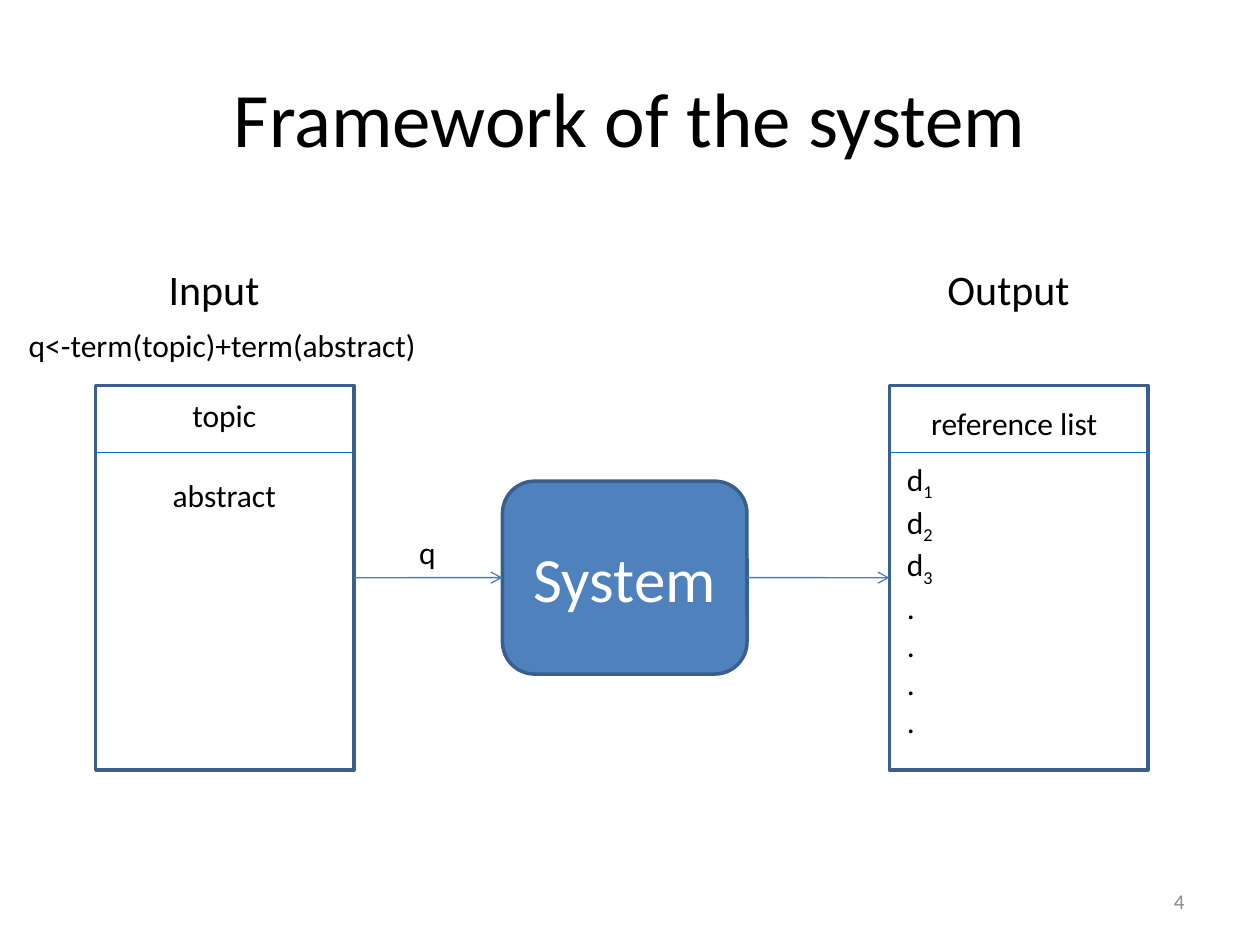
from dataclasses import dataclass

from lxml.etree import SubElement
from pptx import Presentation
from pptx.dml.color import RGBColor as RGB
from pptx.enum.shapes import MSO_CONNECTOR as CONN, MSO_SHAPE as SHAPE
from pptx.enum.text import MSO_ANCHOR as ANCHOR, MSO_AUTO_SIZE as AUTO, PP_ALIGN as ALIGN
from pptx.oxml.ns import qn
from pptx.util import Cm, Pt


@dataclass(frozen=True)
class Theme:
    """Colours, font and type sizes of the slide."""
    font: str = "Calibri"
    text: str = "000000"
    light: str = "FFFFFF"
    muted: str = "8C8C8C"
    fill: str = "4F81BD"
    border: str = "3A5F8C"
    divider: str = "0070C0"
    arrow: str = "4B7EBC"
    title: int = 44
    system: int = 36
    heading: int = 24
    body: int = 18
    number: int = 12


T = Theme()


def apply(obj, values):
    """Set each named attribute of an object."""
    for name, value in values.items():
        setattr(obj, name, value)


def add_run(p, text, size, color, subscript=False):
    """Add one formatted run to a paragraph."""
    r = p.add_run()
    apply(r, {"text": text})
    apply(r.font, {"name": T.font, "size": Pt(size)})
    r.font.color.rgb = RGB.from_string(color)
    if subscript:
        r._r.get_or_add_rPr().set("baseline", "-25000")


def write(tf, lines, size, color=T.text, align=ALIGN.LEFT):
    """Fill a text frame; a line is a base text and its subscript."""
    for i, (base, sub) in enumerate(lines):
        p = tf.add_paragraph() if i else tf.paragraphs[0]
        p.alignment = align
        add_run(p, base, size, color)
        if sub:
            add_run(p, sub, size, color, True)


def add_text(s, box, lines, size, color=T.text, align=ALIGN.LEFT, **frame):
    """Add a text box holding a string or a list of lines."""
    tf = s.shapes.add_textbox(*map(Cm, box)).text_frame
    apply(tf, {"word_wrap": True, "auto_size": AUTO.NONE, **frame})
    write(tf, [(lines, "")] if isinstance(lines, str) else lines, size, color, align)


def add_box(shapes, kind, box, fill=None):
    """Add an outlined shape, filled if a colour is given."""
    sp = shapes.add_shape(kind, *map(Cm, box))
    sp.shadow.inherit = False
    if fill:
        sp.fill.solid()
        sp.fill.fore_color.rgb = RGB.from_string(fill)
    else:
        sp.fill.background()
    sp.line.color.rgb = RGB.from_string(T.border)
    sp.line.width = Pt(2)
    return sp


def add_line(shapes, ends, color):
    """Add a thin straight connector without shadow."""
    cn = shapes.add_connector(CONN.STRAIGHT, *map(Cm, ends))
    cn.line.color.rgb = RGB.from_string(color)
    cn.line.width = Pt(0.75)
    SubElement(cn._element.spPr, qn("a:effectLst"))
    return cn


def add_document(s, left):
    """Add a grouped page frame with a header divider and return the frame."""
    top, width, height, divider = 7.77, 5.21, 7.75, 9.12
    shapes = s.shapes.add_group_shape().shapes
    frame = add_box(shapes, SHAPE.RECTANGLE, (left, top, width, height))
    add_line(shapes, (left, divider, left + width, divider), T.divider)
    return frame


def add_arrow(s, source, target):
    """Join the right side of one shape to the left side of another."""
    cn = add_line(s.shapes, (0, 0, 0, 0), T.arrow)
    cn.begin_connect(source, 3)
    cn.end_connect(target, 1)
    SubElement(cn.line._get_or_add_ln(), qn("a:tailEnd"), type="arrow")


def main():
    """Build the slide and save it."""
    prs = Presentation()
    apply(prs, {"slide_width": Cm(25.4), "slide_height": Cm(19.05)})
    s = prs.slides.add_slide(prs.slide_layouts[6])

    middle = {"vertical_anchor": ANCHOR.MIDDLE}
    add_text(s, (1.27, 0.76, 22.86, 3.18), "Framework of the system",
             T.title, align=ALIGN.CENTER, **middle)
    add_text(s, (18.21, 17.65, 5.92, 1.02), "4", T.number, T.muted, ALIGN.RIGHT, **middle)

    source = add_document(s, 1.93)
    result = add_document(s, 17.93)
    system = add_box(s.shapes, SHAPE.ROUNDED_RECTANGLE, (10.13, 9.7, 4.93, 3.89), T.fill)
    apply(system.text_frame, middle)
    write(system.text_frame, [("System", "")], T.system, T.light, ALIGN.CENTER)
    add_arrow(s, source, system)
    add_arrow(s, system, result)

    labels = [
        ("Input", 3.15, 5.18, 2.39, T.heading),
        ("Output", 18.85, 5.18, 3.38, T.heading),
        ("q<-term(topic)+term(abstract)", 0.33, 6.45, 8.41, T.body),
        ("topic", 3.63, 7.85, 1.8, T.body),
        ("abstract", 3.23, 9.47, 2.62, T.body),
        ("reference list", 18.52, 8.03, 4.06, T.body),
        ("q", 8.2, 10.62, 0.86, T.body),
    ]
    for text, left, top, width, size in labels:
        height = 1.27 if size == T.heading else 1.02
        add_text(s, (left, top, width, height), text, size,
                 word_wrap=False, auto_size=AUTO.SHAPE_TO_FIT_TEXT)

    ranking = [("d", n) for n in "123"] + [(".", "")] * 4
    add_text(s, (18.03, 9.14, 5, 5.64), ranking, T.body, auto_size=AUTO.SHAPE_TO_FIT_TEXT)
    prs.save("out.pptx")


if __name__ == "__main__":
    main()
